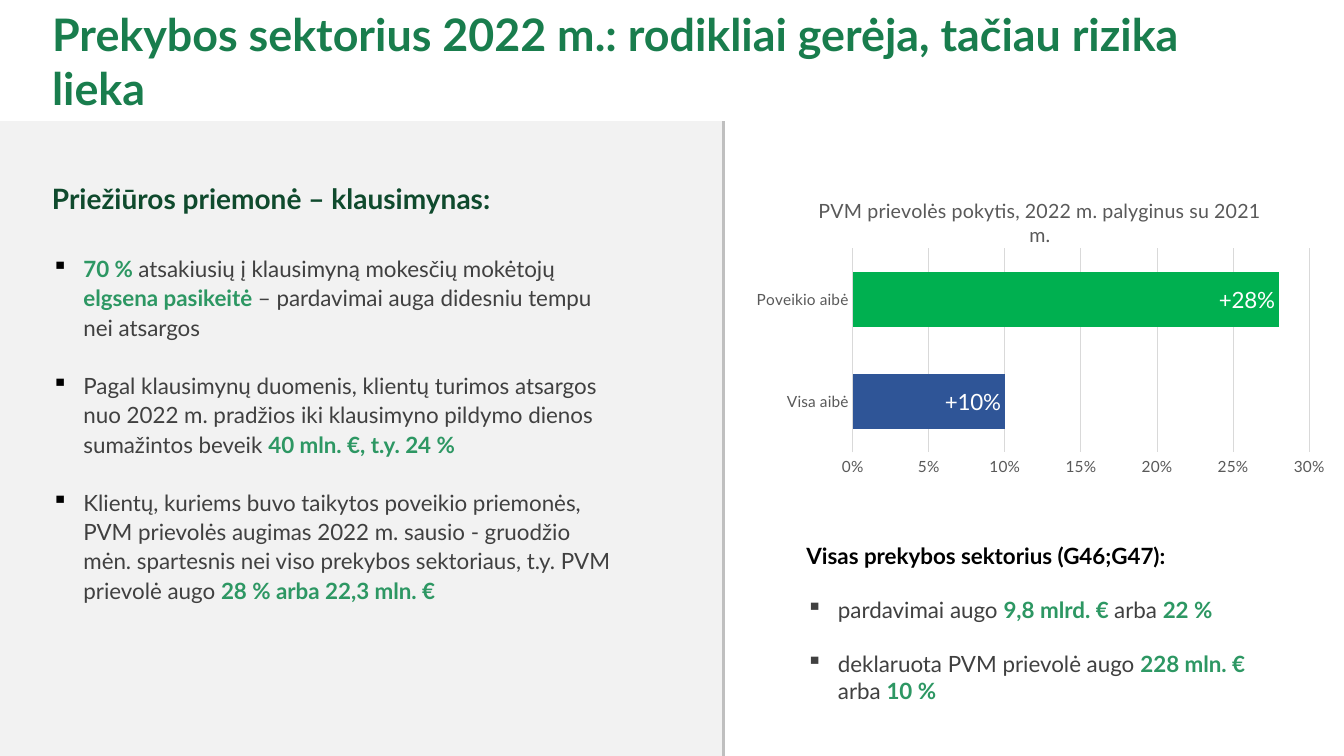
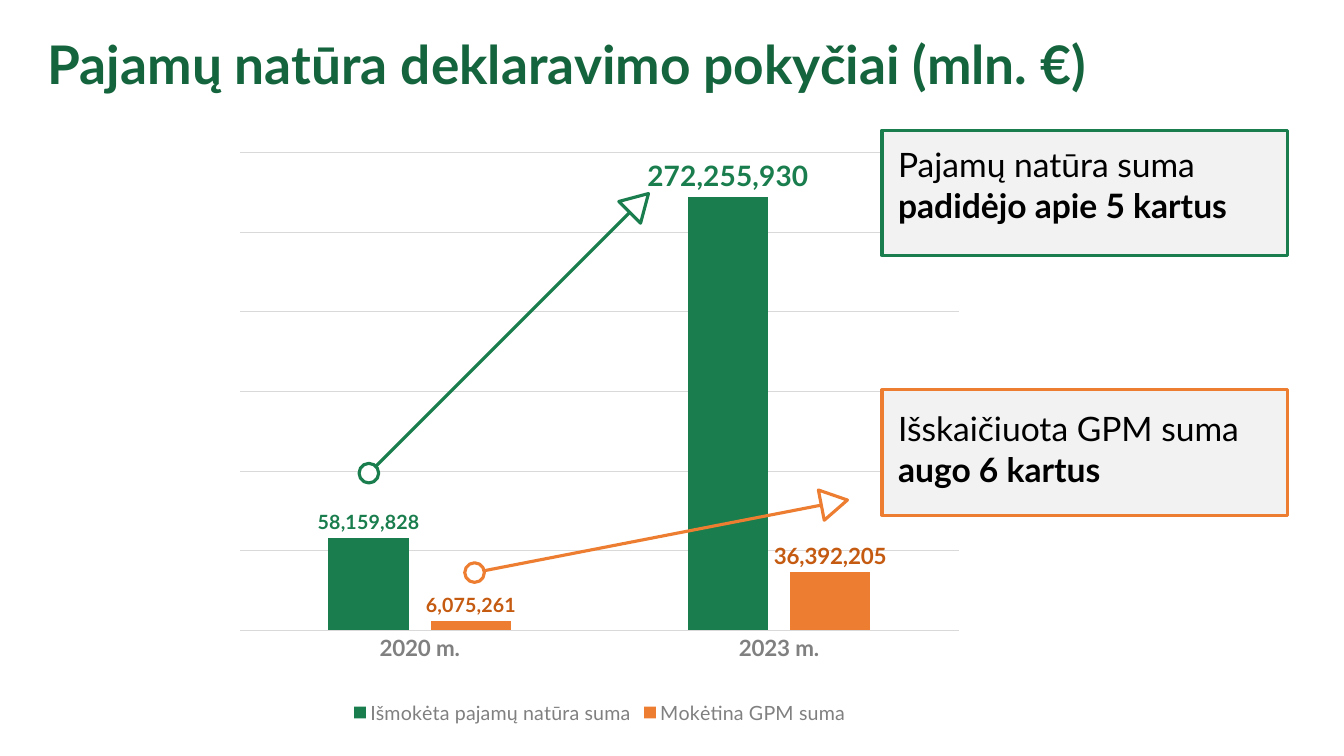
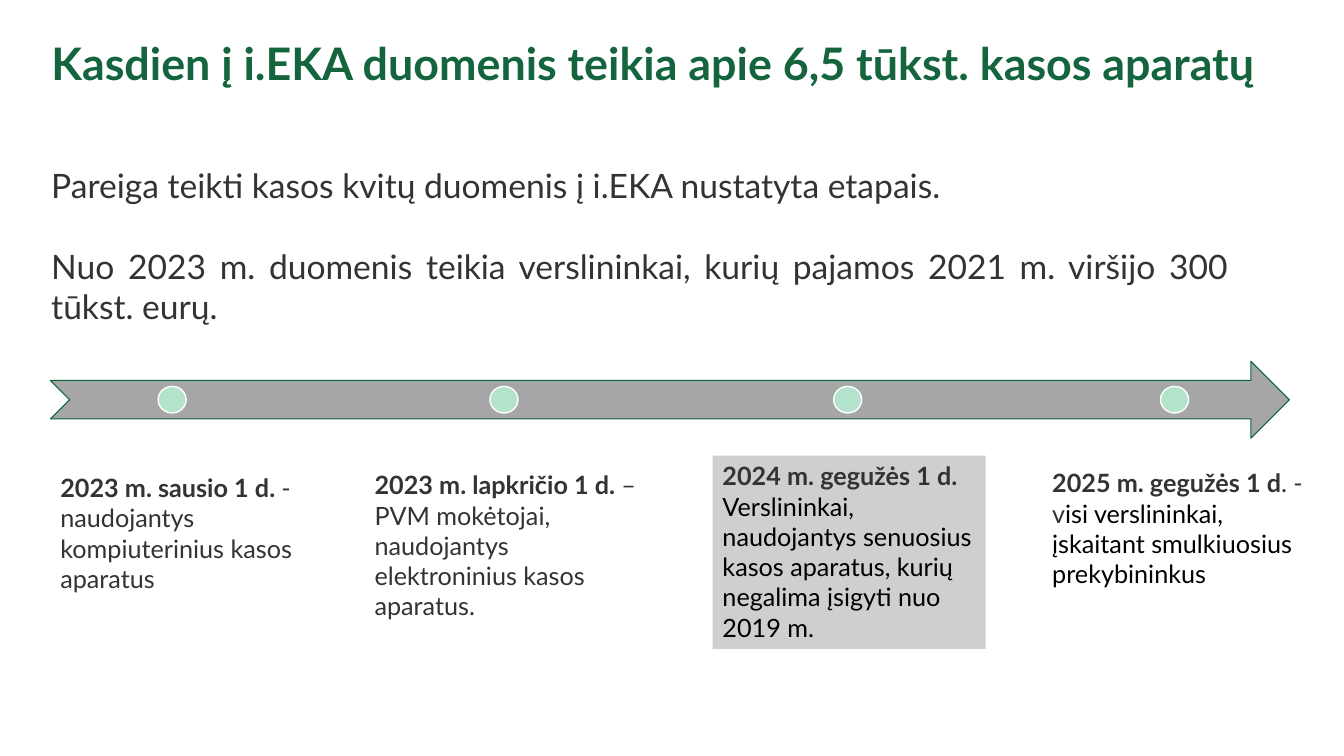
"""Builds three slides on tax supervision results."""
import math
import pptx
import pptx.chart.data
import pptx.dml.color
import pptx.enum.chart
import pptx.enum.shapes
import pptx.enum.text
import pptx.oxml
import pptx.oxml.ns
import pptx.util
from lxml import etree

Pt = pptx.util.Pt
qn = pptx.oxml.ns.qn
SHAPE = pptx.enum.shapes.MSO_SHAPE
ALIGN = pptx.enum.text.PP_ALIGN
KIND = pptx.enum.chart.XL_CHART_TYPE
SPOT = pptx.enum.chart.XL_LABEL_POSITION
TICK = pptx.enum.chart.XL_TICK_MARK

FONT = "Lato"
GREEN, DEEP, DARK, MINT = "197D4D", "14643D", "0F4A2D", "2D9763"
ORANGE, RUST, PALE, GRID = "ED7D31", "C55A11", "F2F2F2", "D9D9D9"
BLACK, WHITE, TEXT, INK, GREY = "000000", "FFFFFF", "404040", "333333", "808080"

TITLES = [
    ("Prekybos sektorius 2022 m.: rodikliai gerėja, tačiau rizika lieka", (30, 1.5, 858, 85), 32, GREEN),
    ("Pajamų natūra deklaravimo pokyčiai (mln. €)", (27, 19, 922, 53), 38, DEEP),
    ("Kasdien į i.EKA duomenis teikia apie 6,5 tūkst. kasos aparatų", (29.5, 22, 898, 85), 32, DEEP),
]

SURVEY = [
    [("70 % ", MINT, True), ("atsakiusių į klausimyną mokesčių mokėtojų ", TEXT, False),
     ("elgsena pasikeitė ", MINT, True), ("– pardavimai auga didesniu tempu nei atsargos", TEXT, False)],
    [("Pagal klausimynų duomenis, klientų turimos atsargos nuo 2022 m. pradžios iki klausimyno "
      "pildymo dienos sumažintos beveik ", TEXT, False), ("40 mln. €, t.y. 24 %", MINT, True)],
    [("Klientų, kuriems buvo taikytos poveikio priemonės, PVM prievolės augimas 2022 m. sausio - gruodžio "
      "mėn. spartesnis nei viso prekybos sektoriaus, t.y. PVM prievolė augo ", TEXT, False),
     ("28 % arba 22,3 mln. €", MINT, True)],
]
SECTOR = [
    [("pardavimai augo ", TEXT, False), ("9,8 mlrd. € ", MINT, True),
     ("arba ", TEXT, False), ("22 %", MINT, True)],
    [("deklaruota PVM prievolė augo ", TEXT, False), ("228 mln. € ", MINT, True),
     ("arba ", TEXT, False), ("10 %", MINT, True)],
]
CHANGE = [("Visa aibė", 0.1, "+10%", "2F5597"), ("Poveikio aibė", 0.28, "+28%", "00B050")]

YEARS = ["2020 m.", "2023 m."]
SUMS = [
    ("Išmokėta pajamų natūra suma", (58159828, 272255930), GREEN, GREEN, (14, 20)),
    ("Mokėtina GPM suma", (6075261, 36392205), ORANGE, RUST, (14, 16)),
]
CALLS = [
    ("Pajamų natūra suma ", "padidėjo apie 5 kartus", 93, 10, GREEN),
    ("Išskaičiuota GPM suma ", "augo 6 kartus", 278.5, 13, ORANGE),
]
TRENDS = [((263.5, 338), (456.5, 145), GREEN), ((339, 409), (596, 359), ORANGE)]

DUTY = [
    "Pareiga teikti kasos kvitų duomenis į i.EKA nustatyta etapais.",
    "Nuo 2023 m. duomenis teikia verslininkai, kurių pajamos 2021 m. viršijo 300 tūkst. eurų.",
]
STAGES = [
    (123, (36, 334, 184, 94), None,
     [[("2023 m. sausio 1 d. ", INK, True), ("- naudojantys kompiuterinius kasos aparatus", INK, False)]]),
    (360, (260.5, 332, 202, 117), None,
     [[("2023 m. lapkričio 1 d. ", INK, True),
       ("– PVM mokėtojai, naudojantys elektroninius kasos aparatus.", INK, False)]]),
    (605.5, (509, 325.5, 195, 138), "D0CECE",
     [[("2024 m. gegužės 1 d.", INK, True)],
      [("Verslininkai, naudojantys senuosius kasos aparatus, kurių negalima įsigyti nuo 2019 m.",
        BLACK, False)]]),
    (839, (744.5, 330.5, 195, 94), None,
     [[("2025 m. gegužės 1 d", INK, True), (". - v", INK, False),
       ("isi verslininkai, įskaitant smulkiuosius prekybininkus", BLACK, False)]]),
]


def rgb(code):
    """Turn a hex string into a colour."""
    return pptx.dml.color.RGBColor.from_string(code)


def style(font, size=None, color=None, bold=None):
    """Set the given traits of a font."""
    font.name = FONT
    if size:
        font.size = Pt(size)
    if color:
        font.color.rgb = rgb(color)
    if bold is not None:
        font.bold = bold


def shape(slide, kind, box, fill, line=None, width=2.25):
    """Add a flat preset shape."""
    item = slide.shapes.add_shape(kind, *map(Pt, box))
    item.shadow.inherit = False
    item.fill.solid()
    item.fill.fore_color.rgb = rgb(fill)
    if line:
        item.line.color.rgb = rgb(line)
        item.line.width = Pt(width)
    else:
        item.line.fill.background()
    return item


def line(slide, start, end, color):
    """Add a straight line without a shadow."""
    item = slide.shapes.add_connector(pptx.enum.shapes.MSO_CONNECTOR.STRAIGHT, *map(Pt, start + end))
    item.line.color.rgb = rgb(color)
    item.line.width = Pt(2.25)
    etree.SubElement(item.element.spPr, qn("a:effectLst"))


def frame(item):
    """Prepare a wrapping text frame that starts at the top."""
    text = item.text_frame
    text.word_wrap = True
    text.auto_size = pptx.enum.text.MSO_AUTO_SIZE.NONE
    text.vertical_anchor = pptx.enum.text.MSO_ANCHOR.TOP
    return text


def bullet(para, color):
    """Give a paragraph a hanging square bullet."""
    props = para._p.get_or_add_pPr()
    props.set("marL", str(Pt(22.5)))
    props.set("indent", str(-Pt(22.5)))
    tint = etree.SubElement(props, qn("a:buClr"))
    etree.SubElement(tint, qn("a:srgbClr")).set("val", color)
    etree.SubElement(props, qn("a:buChar")).set("char", "▪")


def write(text, paras, size, gap=0, dot=None, pitch=None, align=ALIGN.LEFT):
    """Write paragraphs of (text, colour, bold) runs; dot colours bullets after the first."""
    for i, runs in enumerate(paras):
        para = text.paragraphs[0] if i == 0 else text.add_paragraph()
        if i and dot:
            bullet(para, dot)
        if i and pitch:
            para.line_spacing = Pt(pitch)
        if i and gap:
            para.space_before = Pt(gap)
        para.alignment = align
        style(para.font, size)
        for words, color, bold in runs:
            run = para.add_run()
            run.text = words
            style(para.font if len(runs) == 1 else run.font, None, color, bold)


def block(slide, box, paras, size, **opts):
    """Add a text box."""
    item = slide.shapes.add_textbox(*map(Pt, box))
    write(frame(item), paras, size, **opts)
    return item


def start(deck, words, box, size, color):
    """Add a slide with a formatted title."""
    slide = deck.slides.add_slide(deck.slide_layouts[5])
    head = slide.shapes.title
    head.left, head.top, head.width, head.height = map(Pt, box)
    write(frame(head), [[(words, color, True)]], size)
    return slide


def place(node, index, **parts):
    """Set the manual layout of a chart part."""
    for old in node.findall(qn("c:layout")):
        node.remove(old)
    outer = etree.Element(qn("c:layout"))
    inner = etree.SubElement(outer, qn("c:manualLayout"))
    if "w" in parts:
        etree.SubElement(inner, qn("c:layoutTarget")).set("val", "inner")
    for key in "xy":
        etree.SubElement(inner, qn(f"c:{key}Mode")).set("val", "edge")
    for key, value in parts.items():
        etree.SubElement(inner, qn(f"c:{key}")).set("val", str(value))
    node.insert(index, outer)


def graph(slide, kind, box, cats, series, form, gap, top, step, area):
    """Add a bar chart with plain axes and a fixed plot area."""
    data = pptx.chart.data.CategoryChartData(number_format=form)
    data.categories = cats
    for name, values in series:
        data.add_series(name, values)
    chart = slide.shapes.add_chart(kind, *map(Pt, box), data).chart
    style(chart.font, 11, BLACK)
    chart.has_legend = chart.has_title = False
    plot = chart.plots[0]
    plot.gap_width = gap
    plot.vary_by_categories = False
    axis, scale = chart.category_axis, chart.value_axis
    for part in (axis, scale):
        part.major_tick_mark = part.minor_tick_mark = TICK.NONE
        style(part.tick_labels.font, 11, "595959")
    scale.minimum_scale, scale.maximum_scale, scale.major_unit = 0, top, step
    scale.tick_labels.number_format = form
    scale.tick_labels.number_format_is_linked = False
    scale.format.line.fill.background()
    for edge in (axis.format.line, scale.major_gridlines.format.line):
        edge.color.rgb = rgb(GRID)
        edge.width = Pt(0.75)
    place(chart.element.find(".//" + qn("c:plotArea")), 0, **dict(zip("xywh", area)))
    return chart


def paint(part, color):
    """Fill a series or a point."""
    part.format.fill.solid()
    part.format.fill.fore_color.rgb = rgb(color)


def trade(deck):
    """Build the slide on the trade sector."""
    slide = start(deck, *TITLES[0])
    shape(slide, SHAPE.RECTANGLE, (0, 86.5, 517, 453.5), PALE)
    line(slide, (517, 86.5), (517, 540), "BFBFBF")
    lead = [("Priežiūros priemonė – klausimynas:", DARK, True)]
    box = block(slide, (30, 126, 420, 313), [lead] + SURVEY, 16, gap=20.9, dot=BLACK, pitch=20.9)
    paras = box.text_frame.paragraphs
    paras[0].font.size = Pt(20)
    paras[1].space_before = Pt(27)
    lead = [("Visas prekybos sektorius (G46;G47):", BLACK, True)]
    block(slide, (569, 384, 343, 124), [lead] + SECTOR, 16, gap=19.2, dot=TEXT)
    names, values, notes, tints = zip(*CHANGE)
    chart = graph(slide, KIND.BAR_CLUSTERED, (532, 126, 417, 228), names, [("Series 1", values)],
                  "0%", 86, 0.3, 0.05, (0.185, 0.225, 0.782, 0.64))
    head = chart.chart_title
    head.text_frame.text = "PVM prievolės pokytis, 2022 m. palyginus su 2021 m."
    style(head.text_frame.paragraphs[0].font, 14, "595959", False)
    place(head.element, 1, x=0.12, y=0.05)
    for i, (note, tint) in enumerate(zip(notes, tints)):
        point = chart.series[0].points[i]
        paint(point, tint)
        label = point.data_label
        run = label.text_frame.paragraphs[0].add_run()
        run.text = note
        style(run.font, 16, WHITE)
        label.position = SPOT.INSIDE_END


def income(deck):
    """Build the slide on income in kind."""
    slide = start(deck, *TITLES[1])
    chart = graph(slide, KIND.COLUMN_CLUSTERED, (162, 98, 533, 422.5), YEARS, [row[:2] for row in SUMS],
                  "#,##0", 219, 300000000, 50000000, (0.018, 0.026, 0.963, 0.808))
    chart.plots[0].overlap = -27
    chart.value_axis.visible = False
    style(chart.category_axis.tick_labels.font, 16, GREY, True)
    chart.has_legend = True
    chart.legend.position = pptx.enum.chart.XL_LEGEND_POSITION.BOTTOM
    chart.legend.include_in_layout = False
    style(chart.legend.font, 14, GREY)
    for series, (_, _, fill, tint, sizes) in zip(chart.series, SUMS):
        paint(series, fill)
        for i, size in enumerate(sizes):
            label = series.points[i].data_label
            style(label.font, size, tint, True)
            label.position = SPOT.OUTSIDE_END
    for plain, strong, top, inset, color in CALLS:
        text = frame(shape(slide, SHAPE.RECTANGLE, (630, top, 289.5, 89.5), PALE, color))
        text.margin_left, text.margin_top = Pt(11.5), Pt(inset)
        write(text, [[(plain, BLACK, False), (strong, BLACK, True)]], 24)
    for (x, y), (right, up), color in TRENDS:
        line(slide, (x, y), (right, up), color)
        shape(slide, SHAPE.OVAL, (x - 7, y - 7, 14, 14), WHITE, color)
        tip = shape(slide, SHAPE.ISOSCELES_TRIANGLE, (right - 11, up - 9.5, 22, 19), WHITE, color)
        tip.rotation = round(math.degrees(math.atan2(right - x, y - up)), 1)


def stages(deck):
    """Build the slide on the stages of data reporting."""
    slide = start(deck, *TITLES[2])
    block(slide, (29.5, 114.5, 854.5, 124), [[(words, INK, False)] for words in DUTY], 24,
          gap=28.8, align=ALIGN.JUSTIFY)
    shape(slide, SHAPE.NOTCHED_RIGHT_ARROW, (36, 258, 885, 55), "A6A6A6", "0A6438", 0.75)
    for middle, box, fill, paras in STAGES:
        shape(slide, SHAPE.OVAL, (middle - 10, 276, 20, 19), "B4E3CC", WHITE, 1)
        item = block(slide, box, paras, 18)
        if fill:
            paint_box = item.fill
            paint_box.solid()
            paint_box.fore_color.rgb = rgb(fill)


def main():
    """Build and save the deck."""
    deck = pptx.Presentation()
    deck.slide_width, deck.slide_height = Pt(960), Pt(540)
    for build in (trade, income, stages):
        build(deck)
    deck.save("out.pptx")


if __name__ == "__main__":
    main()
